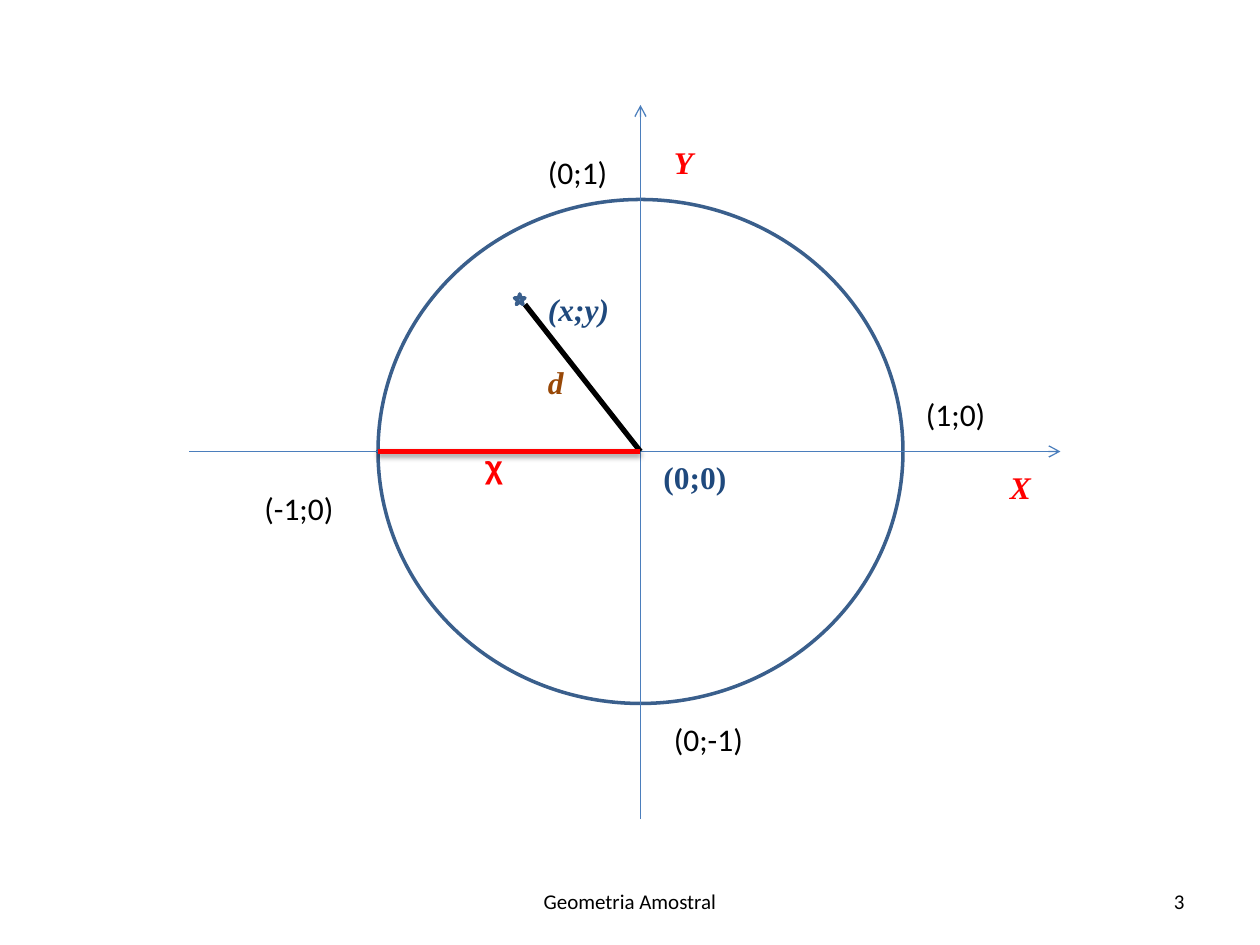
from typing import NamedTuple

from lxml import etree
from pptx import Presentation
from pptx.dml.color import RGBColor
from pptx.enum.shapes import MSO_CONNECTOR, MSO_SHAPE
from pptx.enum.text import MSO_ANCHOR, MSO_AUTO_SIZE, PP_ALIGN
from pptx.oxml.ns import qn
from pptx.util import Pt

STRAIGHT = MSO_CONNECTOR.STRAIGHT
ELLIPSE, STAR = MSO_SHAPE.OVAL, MSO_SHAPE.STAR_5_POINT
LEFT, CENTER, RIGHT = PP_ALIGN.LEFT, PP_ALIGN.CENTER, PP_ALIGN.RIGHT
TOP, MIDDLE = MSO_ANCHOR.TOP, MSO_ANCHOR.MIDDLE
FIT, FIXED = MSO_AUTO_SIZE.SHAPE_TO_FIT_TEXT, MSO_AUTO_SIZE.NONE

SERIF, SANS, SYMBOL = "Times New Roman", "Calibri", "Arial"
BLACK, RED, NAVY, BROWN = "000000", "FF0000", "1F497D", "984807"
OUTLINE, AXIS, STAR_FILL = "3A5F8C", "4B7EBC", "4F81BD"

CENTER_X, CENTER_Y = 366, 258
RADIUS_X, RADIUS_Y = 150, 144
LABEL_HEIGHT = 29


class Segment(NamedTuple):
    start: tuple[float, float]
    end: tuple[float, float]
    color: str
    weight: float
    arrow: bool = False
    shadow: bool = False


class Label(NamedTuple):
    text: str
    left: float
    top: float
    width: float
    font: str = SANS
    color: str = BLACK
    bold: bool = False
    italic: bool = False


ORIGIN = (CENTER_X, CENTER_Y)
AXES = [
    Segment((CENTER_X, 468), (CENTER_X, 60), AXIS, 0.75, arrow=True),
    Segment((108, CENTER_Y), (606, CENTER_Y), AXIS, 0.75, arrow=True),
]
DISTANCE = Segment(ORIGIN, (300, 174), BLACK, 3)
RADIUS = Segment(ORIGIN, (CENTER_X - RADIUS_X, CENTER_Y), RED, 3, shadow=True)

LABELS = [
    Label("Y", 378, 78, 26, SERIF, RED, True, True),
    Label("X", 570, 264, 27, SERIF, RED, True, True),
    Label("(x;y)", 306, 162, 51, SERIF, NAVY, True, True),
    Label("(0;0)", 372, 258, 51, SERIF, NAVY, True),
    Label("d", 306, 204, 24, SERIF, BROWN, True, True),
    Label("(-1;0)", 144, 276, 55),
    Label("(1;0)", 522, 222, 49),
    Label("(0;-1)", 378, 408, 55),
    Label("(0;1)", 306, 84, 49),
    Label("χ", 270, 252, 24.5, SYMBOL, RED, True),
]


def rgb(color: str) -> RGBColor:
    return RGBColor.from_string(color)


def add_outlined_shape(page, kind, left: float, top: float, width: float,
                       height: float, fill: str | None = None) -> None:
    shape = page.shapes.add_shape(kind, Pt(left), Pt(top), Pt(width), Pt(height))
    shape.shadow.inherit = False
    if fill:
        shape.fill.solid()
        shape.fill.fore_color.rgb = rgb(fill)
    else:
        shape.fill.background()
    shape.line.color.rgb = rgb(OUTLINE)
    shape.line.width = Pt(2)


def add_segment(page, segment: Segment) -> None:
    points = [Pt(value) for value in (*segment.start, *segment.end)]
    connector = page.shapes.add_connector(STRAIGHT, *points)
    connector.line.color.rgb = rgb(segment.color)
    connector.line.width = Pt(segment.weight)
    if segment.arrow:
        line = connector.line._get_or_add_ln()
        etree.SubElement(line, qn("a:tailEnd"), type="arrow")
    effects = etree.SubElement(connector._element.spPr, qn("a:effectLst"))
    if segment.shadow:
        shadow = etree.SubElement(
            effects, qn("a:outerShdw"), blurRad=str(Pt(3.1)),
            dist=str(Pt(1.6)), dir="5400000", rotWithShape="0")
        color = etree.SubElement(shadow, qn("a:srgbClr"), val=BLACK)
        etree.SubElement(color, qn("a:alpha"), val="38000")


def add_text(page, text: str, left: float, top: float, width: float, *,
             font: str = SANS, size: float = 18, color: str = BLACK,
             bold: bool = False, italic: bool = False, align=LEFT,
             anchor=TOP, wrap: bool = False) -> None:
    box = page.shapes.add_textbox(Pt(left), Pt(top), Pt(width), Pt(LABEL_HEIGHT))
    frame = box.text_frame
    frame.word_wrap = wrap
    frame.auto_size = FIXED if wrap else FIT
    frame.vertical_anchor = anchor
    para = frame.paragraphs[0]
    para.alignment = align
    span = para.add_run()
    span.text = text
    span.font.name = font
    span.font.size = Pt(size)
    span.font.bold = bold
    span.font.italic = italic
    span.font.color.rgb = rgb(color)


def main() -> None:
    deck = Presentation()
    deck.slide_width, deck.slide_height = Pt(720), Pt(540)
    page = deck.slides.add_slide(deck.slide_layouts[6])

    # Unit circle and axes
    add_outlined_shape(page, ELLIPSE, CENTER_X - RADIUS_X, CENTER_Y - RADIUS_Y,
                       2 * RADIUS_X, 2 * RADIUS_Y)
    for axis in AXES:
        add_segment(page, axis)

    # Sample point and its distance from the origin
    add_segment(page, DISTANCE)
    add_outlined_shape(page, STAR, 294, 168, 6, 6, fill=STAR_FILL)

    # Labels
    for label in LABELS:
        add_text(page, label.text, label.left, label.top, label.width,
                 font=label.font, color=label.color, bold=label.bold,
                 italic=label.italic)

    # Highlighted radius
    add_segment(page, RADIUS)

    # Footer and page number
    add_text(page, "Geometria Amostral", 246, 500.5, 228, size=12,
             align=CENTER, anchor=MIDDLE, wrap=True)
    add_text(page, "3", 516, 500.5, 168, size=12,
             align=RIGHT, anchor=MIDDLE, wrap=True)

    deck.save("out.pptx")


if __name__ == "__main__":
    main()
